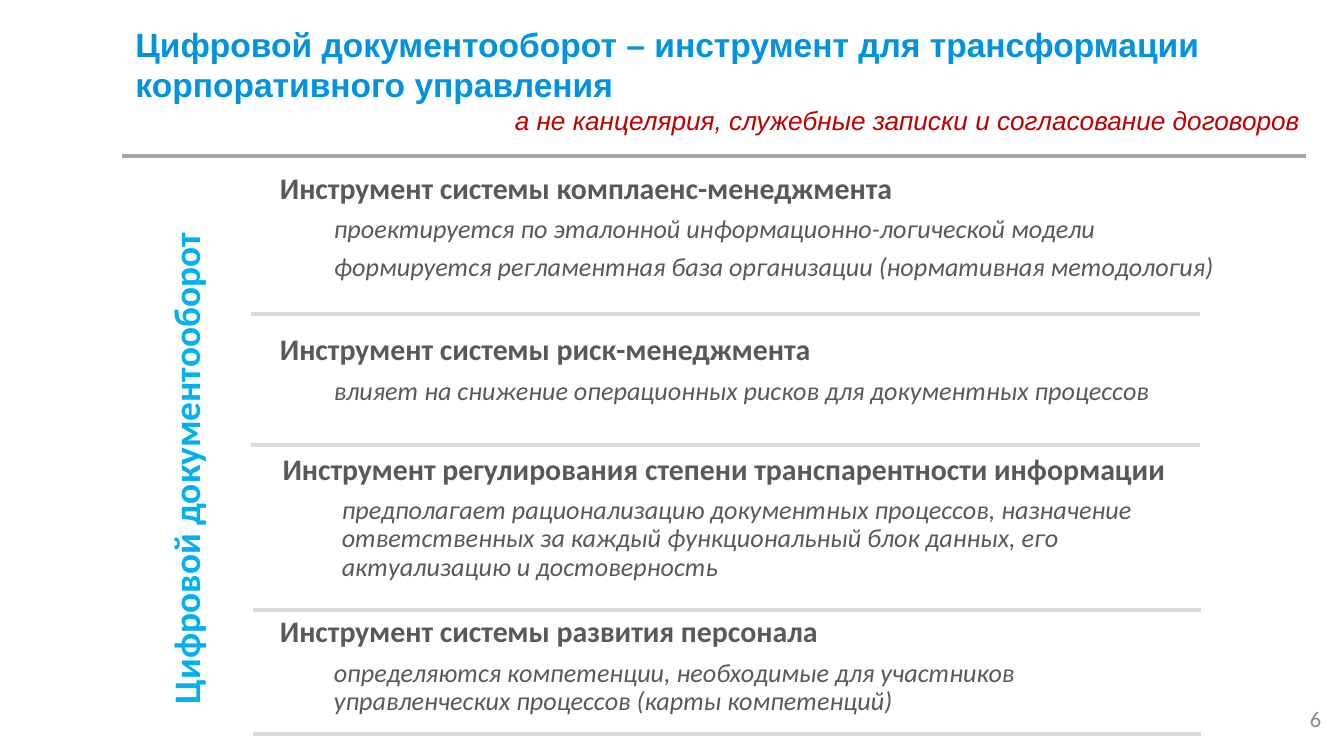
"""Build a slide on digital document flow as a tool of corporate governance."""
from dataclasses import dataclass

from lxml.etree import SubElement
from pptx import Presentation
from pptx.dml.color import RGBColor as Rgb
from pptx.enum.shapes import MSO_CONNECTOR as Connector, MSO_SHAPE as Preset
from pptx.enum.text import MSO_ANCHOR as Anchor, PP_ALIGN as Align
from pptx.oxml.ns import qn
from pptx.util import Cm, Pt


@dataclass(frozen=True)
class Theme:
    """Hold the fonts, colours and type sizes of the slide."""
    title_font: str = "Arial"
    body_font: str = "Calibri"
    title: str = "0293E0"
    subtitle: str = "C00000"
    side: str = "00B0F0"
    body: str = "595959"
    number: str = "8C8C8C"
    main_rule: str = "A6A6A6"
    rule: str = "D9D9D9"
    paper: str = "FFFFFF"
    title_size: int = 18
    side_size: int = 20
    heading_size: int = 16
    detail_size: int = 14
    number_size: int = 12
    rule_width: int = 2


THEME = Theme()

SECTIONS = [
    ("Инструмент системы комплаенс-менеджмента",
     ["проектируется по эталонной информационно-логической модели",
      "формируется регламентная база организации (нормативная методология)"],
     (5.11, 3.1, 19.58, 3.2), 1.02, (4.75, 5.94)),
    ("Инструмент системы риск-менеджмента",
     ["влияет на снижение операционных рисков для документных процессов"],
     (5.11, 6.15, 17.58, 3.2), 1.02, (4.75, 8.41)),
    ("Инструмент регулирования степени транспарентности информации",
     ["предполагает рационализацию документных процессов, назначение "
      "ответственных за каждый функциональный блок данных, его "
      "актуализацию и достоверность"],
     (5.16, 8.41, 17.58, 2.34), 1.12, (4.78, 11.53)),
    ("Инструмент системы развития персонала",
     ["определяются компетенции, необходимые для участников "
      "управленческих процессов (карты компетенций)"],
     (5.11, 11.48, 17.58, 2.26), 1.02, (4.78, 13.87)),
]
RULE_LENGTH = 17.92


def add_rule(page, left, top, length, color):
    """Draw a horizontal rule without a shadow."""
    rule = page.shapes.add_connector(
        Connector.STRAIGHT, Cm(left), Cm(top), Cm(left + length), Cm(top))
    rule.line.color.rgb = Rgb.from_string(color)
    rule.line.width = Pt(THEME.rule_width)
    SubElement(rule.element.spPr, qn("a:effectLst"))


def add_box(page, place, inset, anchor=Anchor.TOP):
    """Add a wrapping text box with equal insets and return its frame."""
    frame = page.shapes.add_textbox(*map(Cm, place)).text_frame
    frame.word_wrap = True
    frame.vertical_anchor = anchor
    frame.margin_left = frame.margin_right = Cm(inset)
    frame.margin_top = frame.margin_bottom = Cm(inset)
    return frame


def add_span(para, text, font, size, color, bold=False, italic=False):
    """Add one styled run to a paragraph."""
    span = para.add_run()
    span.text = text
    span.font.name = font
    span.font.size = Pt(size)
    span.font.color.rgb = Rgb.from_string(color)
    span.font.bold = bold
    span.font.italic = italic


def set_spacing(para, size):
    """Tighten the lines and leave about a third of the type size below."""
    para.line_spacing = 0.9
    para.space_after = Pt(0.35 * size)


def set_indent(para, margin, first=0):
    """Indent a paragraph and its first line."""
    properties = para._p.get_or_add_pPr()
    properties.set("marL", str(Cm(margin)))
    properties.set("indent", str(Cm(first)))


def add_title(page):
    """Add the title panel with its subtitle."""
    panel = page.shapes.add_shape(
        Preset.RECTANGLE, Cm(2.31), Cm(0.33), Cm(23.09), Cm(2.39))
    panel.shadow.inherit = False
    panel.fill.solid()
    panel.fill.fore_color.rgb = Rgb.from_string(THEME.paper)
    panel.line.fill.background()
    frame = panel.text_frame
    frame.word_wrap = True
    frame.vertical_anchor = Anchor.TOP
    para = frame.paragraphs[0]
    para.alignment = Align.LEFT
    add_span(para, "Цифровой документооборот – инструмент для трансформации "
             "корпоративного управления",
             THEME.title_font, THEME.title_size, THEME.title, bold=True)
    para = frame.add_paragraph()
    para.alignment = Align.LEFT
    set_indent(para, 0.03, 7.14)
    add_span(para, "а не канцелярия, служебные записки и согласование договоров",
             THEME.title_font, THEME.detail_size, THEME.subtitle, italic=True)


def add_side_label(page):
    """Add the label that reads upwards beside the sections."""
    frame = add_box(page, (2.31, 2.95, 2.49, 11.81), 0.2, Anchor.MIDDLE)
    frame._txBody.bodyPr.set("vert", "vert270")
    para = frame.paragraphs[0]
    para.alignment = Align.CENTER
    set_spacing(para, THEME.side_size)
    add_span(para, "Цифровой документооборот",
             THEME.body_font, THEME.side_size, THEME.side, bold=True)


def add_section(page, heading, details, place, indent, rule_start):
    """Add a heading with indented details and the rule below them."""
    frame = add_box(page, place, 0.18)
    para = frame.paragraphs[0]
    set_spacing(para, THEME.heading_size)
    add_span(para, heading, THEME.body_font, THEME.heading_size, THEME.body,
             bold=True)
    for detail in details:
        para = frame.add_paragraph()
        set_indent(para, indent)
        set_spacing(para, THEME.detail_size)
        add_span(para, detail, THEME.body_font, THEME.detail_size, THEME.body,
                 italic=True)
    add_rule(page, *rule_start, RULE_LENGTH, THEME.rule)


def add_number(page):
    """Add the page number."""
    frame = add_box(page, (19.3, 13.21, 5.92, 0.76), 0.13, Anchor.MIDDLE)
    frame.margin_left = frame.margin_right = Cm(0.25)
    para = frame.paragraphs[0]
    para.alignment = Align.RIGHT
    add_span(para, "6", THEME.body_font, THEME.number_size, THEME.number)


def main():
    """Assemble the slide and save the deck."""
    deck = Presentation()
    deck.slide_width, deck.slide_height = Cm(25.4), Cm(14.29)
    page = deck.slides.add_slide(deck.slide_layouts[6])
    add_number(page)
    add_rule(page, 2.31, 2.95, 22.38, THEME.main_rule)
    add_side_label(page)
    for section in SECTIONS:
        add_section(page, *section)
    add_title(page)
    deck.save("out.pptx")


if __name__ == "__main__":
    main()
